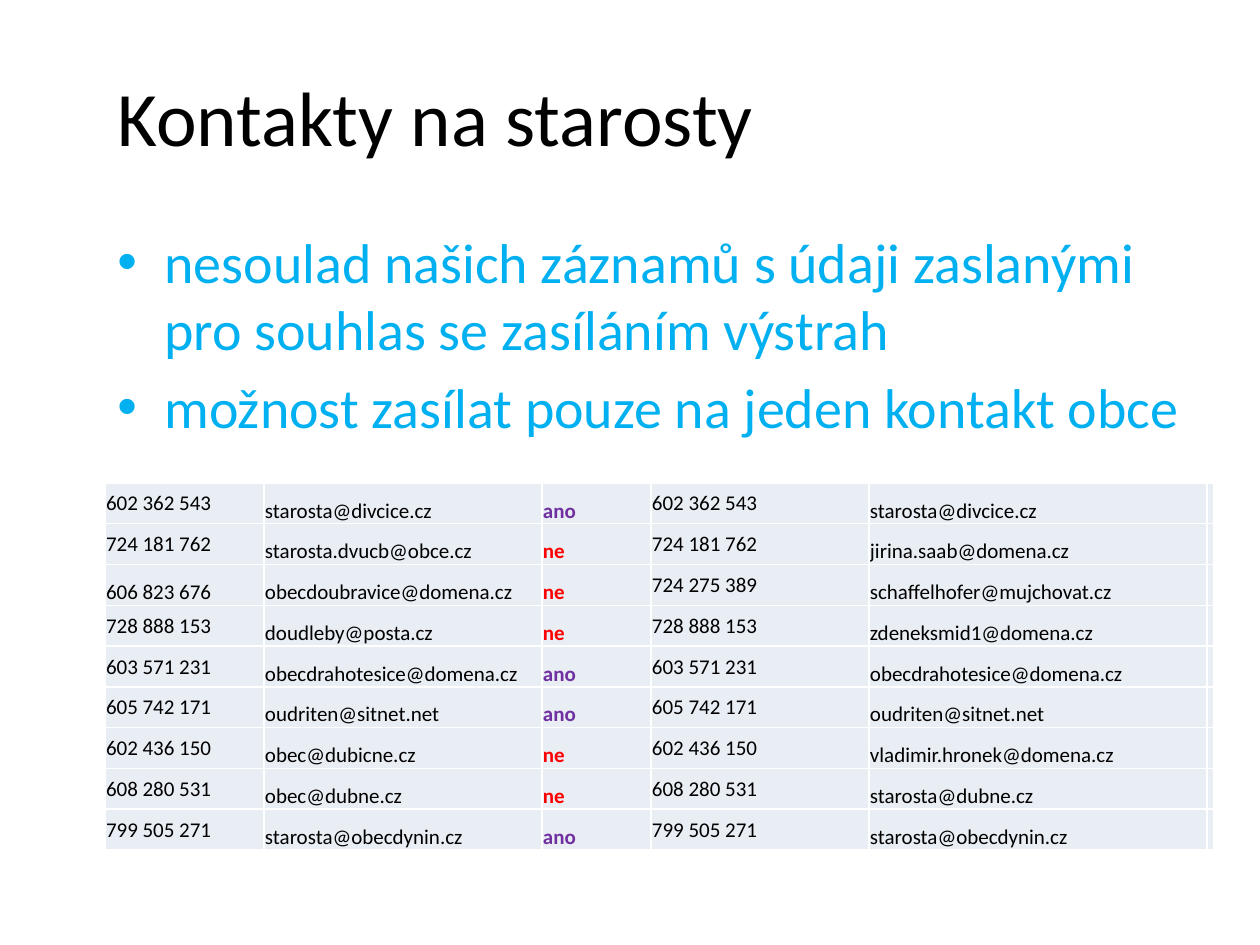
from dataclasses import dataclass

from lxml.etree import SubElement
from pptx import Presentation
from pptx.dml.color import RGBColor
from pptx.enum.text import MSO_ANCHOR as Anchor
from pptx.oxml.ns import qn
from pptx.util import Pt

PX = 914400 // 126
FONT = "Calibri"
BLACK, BLUE, RED, PURPLE = "000000", "00B0F0", "FF0000", "7030A0"
WHITE, CELL_FILL = "FFFFFF", "E9EDF4"
COLUMN_WIDTHS = (159, 278, 109, 218, 338, 7)
ANSWER_COLORS = {"ano": PURPLE, "ne": RED}


@dataclass(frozen=True)
class Contact:
    """Our record of a mayor beside the details that were sent in."""
    phone: str
    email: str
    match: str
    sent_phone: str
    sent_email: str
    phone_anchor: Anchor = Anchor.MIDDLE


CONTACTS = (
    Contact("602 362 543", "starosta@divcice.cz", "ano", "602 362 543", "starosta@divcice.cz"),
    Contact("724 181 762", "starosta.dvucb@obce.cz", "ne", "724 181 762", "jirina.saab@domena.cz"),
    Contact("606 823 676", "obecdoubravice@domena.cz", "ne", "724 275 389",
            "schaffelhofer@mujchovat.cz", Anchor.BOTTOM),
    Contact("728 888 153", "doudleby@posta.cz", "ne", "728 888 153", "zdeneksmid1@domena.cz"),
    Contact("603 571 231", "obecdrahotesice@domena.cz", "ano", "603 571 231",
            "obecdrahotesice@domena.cz"),
    Contact("605 742 171", "oudriten@sitnet.net", "ano", "605 742 171", "oudriten@sitnet.net"),
    Contact("602 436 150", "obec@dubicne.cz", "ne", "602 436 150", "vladimir.hronek@domena.cz"),
    Contact("608 280 531", "obec@dubne.cz", "ne", "608 280 531", "starosta@dubne.cz"),
    Contact("799 505 271", "starosta@obecdynin.cz", "ano", "799 505 271", "starosta@obecdynin.cz"),
)


def px(length: int) -> int:
    """Turn pixels into EMU."""
    return length * PX


def rgb(color: str) -> RGBColor:
    """Turn a hex string into a colour."""
    return RGBColor.from_string(color)


def write(paragraph, text: str, *, size: int, color: str = BLACK, bold: bool = False,
          bullet: bool = False, space_before: float = 0) -> None:
    """Put formatted text into a paragraph."""
    if bullet:
        properties = paragraph._p.get_or_add_pPr()
        properties.set("marL", str(px(47)))
        properties.set("indent", str(px(-47)))
        SubElement(properties, qn("a:buFont"), typeface="Arial")
        SubElement(properties, qn("a:buChar"), char="•")
    if space_before:
        paragraph.space_before = Pt(space_before)
    run = paragraph.add_run()
    run.text = text
    run.font.name = FONT
    run.font.size = Pt(size)
    run.font.bold = bold
    run.font.color.rgb = rgb(color)


def add_text_frame(slide, left: int, top: int, width: int, height: int, anchor: Anchor):
    """Add a wrapping text box and return its text frame."""
    frame = slide.shapes.add_textbox(px(left), px(top), px(width), px(height)).text_frame
    frame.word_wrap = True
    frame.vertical_anchor = anchor
    return frame


def style_cell(cell, anchor: Anchor) -> None:
    """Give a cell its margins, white borders and fill."""
    cell.margin_left = cell.margin_right = cell.margin_top = px(1)
    cell.margin_bottom = 0
    cell.vertical_anchor = anchor
    properties = cell._tc.get_or_add_tcPr()
    for side in ("L", "R", "T", "B"):
        line = SubElement(properties, qn(f"a:ln{side}"), w=str(Pt(1)))
        fill = SubElement(line, qn("a:solidFill"))
        SubElement(fill, qn("a:srgbClr"), val=WHITE)
    cell.fill.solid()
    cell.fill.fore_color.rgb = rgb(CELL_FILL)


def add_contact_table(slide, left: int, top: int, height: int) -> None:
    """Draw the table that compares the contacts."""
    table = slide.shapes.add_table(len(CONTACTS), len(COLUMN_WIDTHS), px(left), px(top),
                                   px(sum(COLUMN_WIDTHS)), px(height)).table
    table.first_row = table.horz_banding = False
    for column, width in zip(table.columns, COLUMN_WIDTHS):
        column.width = px(width)
    for row, contact in zip(table.rows, CONTACTS):
        texts = (contact.phone, contact.email, contact.match,
                 contact.sent_phone, contact.sent_email, "")
        anchors = (contact.phone_anchor, Anchor.BOTTOM, Anchor.BOTTOM,
                   Anchor.MIDDLE, Anchor.BOTTOM, Anchor.TOP)
        for cell, text, anchor in zip(row.cells, texts, anchors):
            style_cell(cell, anchor)
            if text:
                write(cell.text_frame.paragraphs[0], text, size=12,
                      color=ANSWER_COLORS.get(text, BLACK), bold=text in ANSWER_COLORS)


def main() -> None:
    """Build the slide and save it."""
    presentation = Presentation()
    presentation.slide_width, presentation.slide_height = px(1260), px(945)
    slide = presentation.slides.add_slide(presentation.slide_layouts[6])

    title = add_text_frame(slide, 105, 37, 1113, 157, Anchor.MIDDLE)
    write(title.paragraphs[0], "Kontakty na starosty", size=44)

    body = add_text_frame(slide, 105, 221, 1113, 592, Anchor.TOP)
    write(body.paragraphs[0], "nesoulad našich záznamů s údaji zaslanými pro souhlas "
          "se zasíláním výstrah", size=32, color=BLUE, bullet=True)
    write(body.add_paragraph(), "možnost zasílat pouze na jeden kontakt obce",
          size=32, color=BLUE, bullet=True, space_before=6.4)

    add_contact_table(slide, 105, 483, 367)
    presentation.save("out.pptx")


if __name__ == "__main__":
    main()
